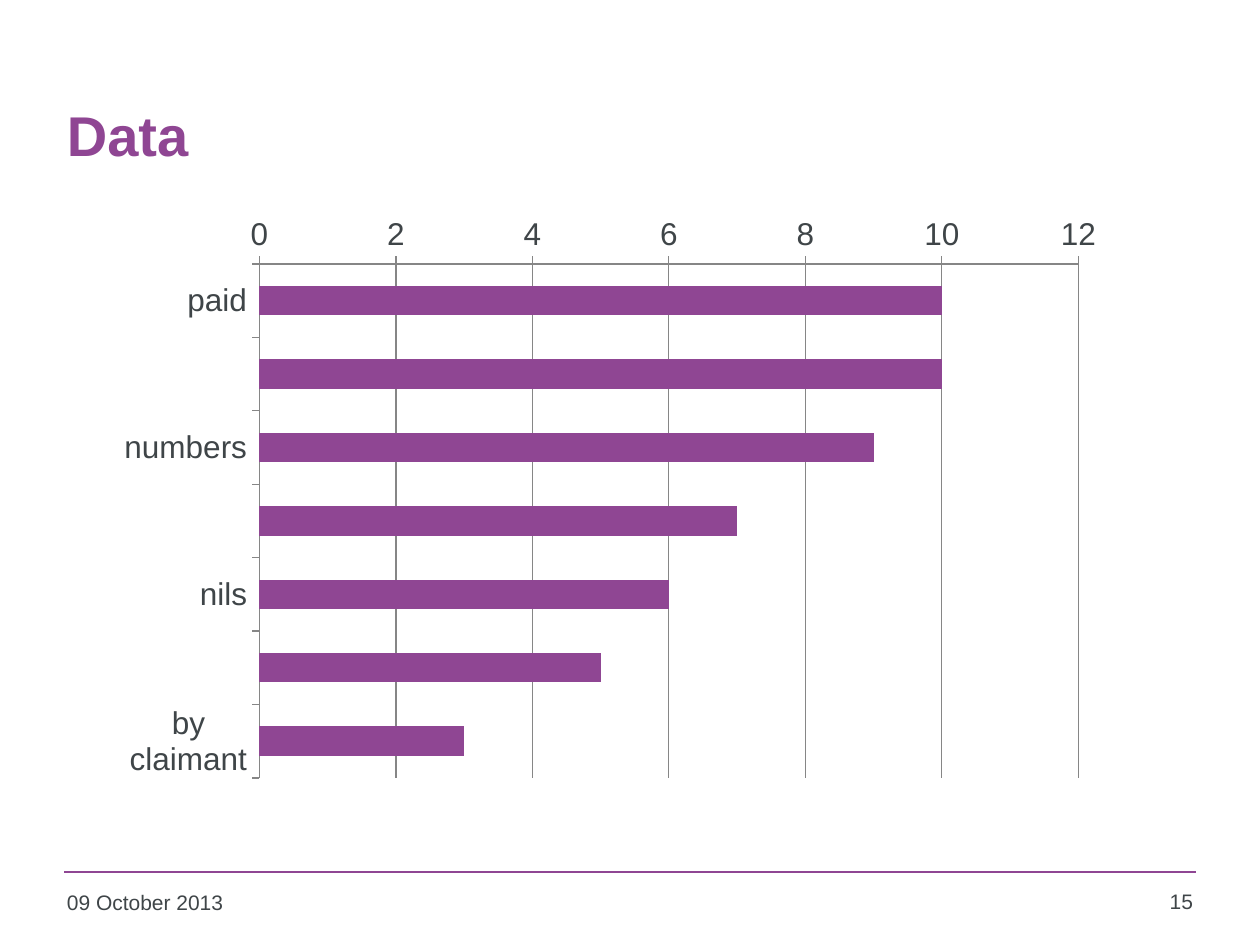
from dataclasses import dataclass

from lxml import etree
from pptx import Presentation
from pptx import util as u
from pptx.chart.data import CategoryChartData
from pptx.dml.color import RGBColor
from pptx.enum import chart as ch
from pptx.enum import shapes, text
from pptx.oxml.ns import qn
from pptx.slide import Slide

COLORS = {"purple": "8F4693", "text": "3F4548", "grid": "868686"}
FONT = "Arial"


@dataclass
class Result:
    value: int
    category: str = ""


RESULTS = [
    Result(10, "paid"),
    Result(10),
    Result(9, "numbers"),
    Result(7),
    Result(6, "nils"),
    Result(5),
    Result(3, "by claimant"),
]


@dataclass
class Label:
    text: str
    left: float
    top: float
    width: float
    height: float
    size: int = 12
    color: str = "text"
    bold: bool = False
    align: text.PP_ALIGN = text.PP_ALIGN.LEFT
    anchor: text.MSO_ANCHOR = text.MSO_ANCHOR.TOP


LABELS = [
    Label("Data", 1.1, 1.12, 23.04, 3.18, 32, "purple", True,
          anchor=text.MSO_ANCHOR.MIDDLE),
    Label("09 October 2013", 1.1, 17.81, 5.59, 0.91),
    Label("15", 22.5, 17.78, 1.8, 0.94, align=text.PP_ALIGN.RIGHT),
]


def rgb(name: str) -> RGBColor:
    return RGBColor.from_string(COLORS[name])


def style_font(font, size: int, color: str, bold: bool = False) -> None:
    font.name = FONT
    font.size = u.Pt(size)
    font.bold = bold
    font.color.rgb = rgb(color)


def style_line(line, color: str, width: float) -> None:
    line.color.rgb = rgb(color)
    line.width = u.Pt(width)


def add_label(slide: Slide, label: Label) -> None:
    box = slide.shapes.add_textbox(
        u.Cm(label.left), u.Cm(label.top), u.Cm(label.width), u.Cm(label.height))
    frame = box.text_frame
    frame.word_wrap = True
    frame.vertical_anchor = label.anchor
    paragraph = frame.paragraphs[0]
    paragraph.text = label.text
    paragraph.alignment = label.align
    style_font(paragraph.font, label.size, label.color, label.bold)


def add_footer_rule(slide: Slide) -> None:
    rule = slide.shapes.add_connector(
        shapes.MSO_CONNECTOR.STRAIGHT,
        u.Cm(1.3), u.Cm(17.58), u.Cm(24.1), u.Cm(17.58))
    style_line(rule.line, "purple", 1)
    etree.SubElement(rule._element.spPr, qn("a:effectLst"))


def add_results_chart(slide: Slide) -> None:
    data = CategoryChartData()
    data.categories = [result.category for result in RESULTS]
    data.add_series("Series 1", [result.value for result in RESULTS])
    chart = slide.shapes.add_chart(
        ch.XL_CHART_TYPE.BAR_CLUSTERED,
        u.Cm(2.1), u.Cm(4.12), u.Cm(20.4), u.Cm(11.8), data).chart
    chart.has_title = False
    chart.has_legend = False
    style_font(chart.font, 18, "text")

    plot = chart.plots[0]
    plot.gap_width = 150
    plot.vary_by_categories = False
    fill = plot.series[0].format.fill
    fill.solid()
    fill.fore_color.rgb = rgb("purple")

    for axis in (chart.category_axis, chart.value_axis):
        axis.major_tick_mark = ch.XL_TICK_MARK.OUTSIDE
        axis.minor_tick_mark = ch.XL_TICK_MARK.NONE
        style_line(axis.format.line, "grid", 0.75)
    chart.category_axis.reverse_order = True
    chart.value_axis.has_major_gridlines = True
    style_line(chart.value_axis.major_gridlines.format.line, "grid", 0.75)
    chart.value_axis.minimum_scale = 0
    chart.value_axis.maximum_scale = 12
    chart.value_axis.major_unit = 2


def main() -> None:
    presentation = Presentation()
    presentation.slide_width = u.Cm(25.4)
    presentation.slide_height = u.Cm(19.05)
    slide = presentation.slides.add_slide(presentation.slide_layouts[6])
    add_footer_rule(slide)
    for label in LABELS:
        add_label(slide, label)
    add_results_chart(slide)
    presentation.save("out.pptx")


if __name__ == "__main__":
    main()
